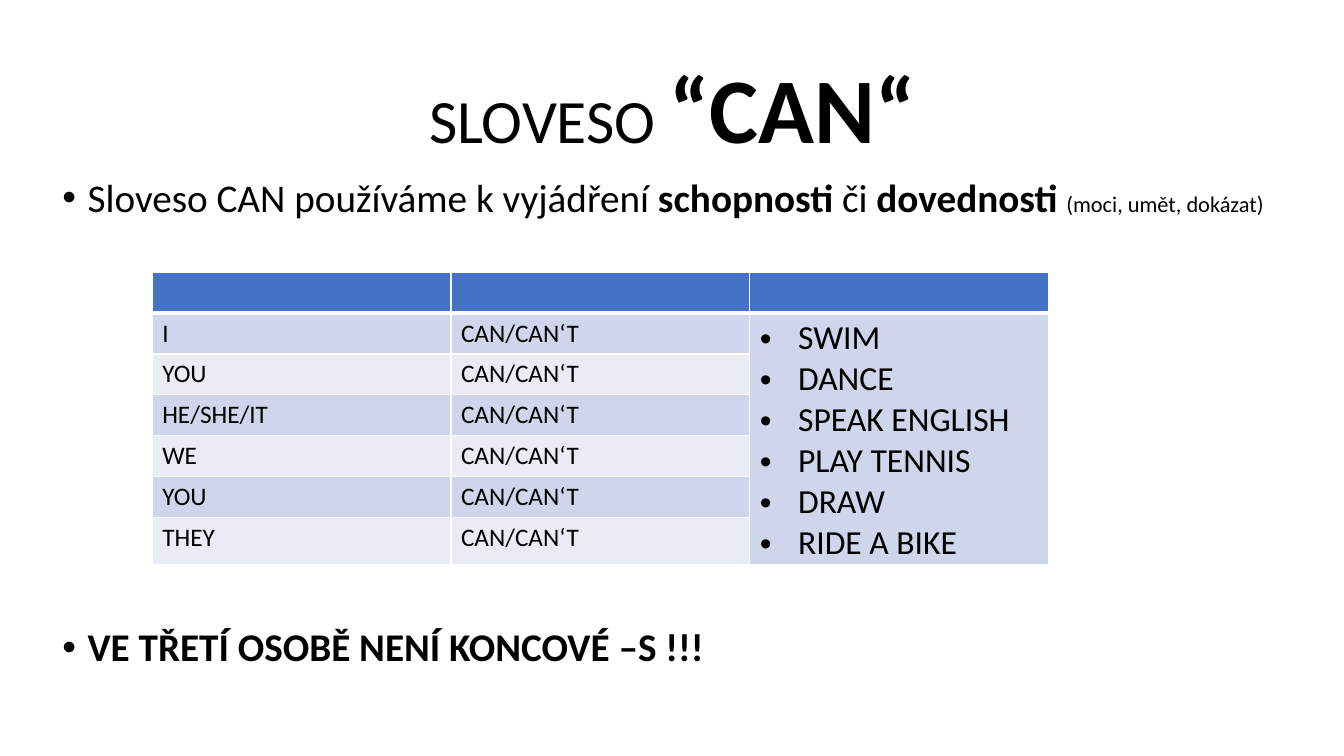
"""Build the lesson slide on the verb CAN."""
from dataclasses import dataclass
from lxml.etree import SubElement as Sub
from pptx import Presentation
from pptx.dml.color import RGBColor as Rgb
from pptx.enum.text import MSO_ANCHOR as Anchor, PP_ALIGN as Align
from pptx.oxml.ns import qn
from pptx.util import Inches, Pt


@dataclass(frozen=True)
class Theme:
    """Hold the colours and type sizes."""
    font: str = "Calibri"
    ink: str = "000000"
    line: str = "FFFFFF"
    head: str = "4472C4"
    bands: tuple[str, str] = ("CFD5EA", "E9EBF5")
    title: int = 44
    big: int = 66
    body: int = 28
    note: int = 16
    cell: int = 18
    verb: int = 24


@dataclass(frozen=True)
class Bit:
    """Describe one run of text."""
    text: str
    size: int
    bold: bool = False


@dataclass(frozen=True)
class Line:
    """Describe one paragraph of a text box."""
    bits: tuple[Bit, ...]
    gap: int = 0
    dot: bool = False
    align: Align = Align.LEFT


@dataclass(frozen=True)
class Box:
    """Describe one text box."""
    left: float
    top: float
    width: float
    height: float
    anchor: Anchor
    lines: tuple[Line, ...]


LOOK = Theme()
BOXES = (
    Box(0.92, 0.4, 11.5, 1.45, Anchor.MIDDLE, (
        Line((Bit("SLOVESO ", LOOK.title), Bit("“CAN“", LOOK.big, True)),
             align=Align.CENTER),
    )),
    Box(0.52, 1.72, 12.35, 5.38, Anchor.TOP, (
        Line((
            Bit("Sloveso CAN používáme k vyjádření ", LOOK.body),
            Bit("schopnosti", LOOK.body, True),
            Bit(" či ", LOOK.body),
            Bit("dovednosti ", LOOK.body, True),
            Bit("(moci, umět, dokázat)", LOOK.note),
        ), 10, True),
        Line((Bit("VE TŘETÍ OSOBĚ NENÍ KONCOVÉ –S !!!", LOOK.body, True),),
             291, True),
    )),
)
WHO = ("I", "YOU", "HE/SHE/IT", "WE", "YOU", "THEY")
VERBS = ("SWIM", "DANCE", "SPEAK ENGLISH", "PLAY TENNIS", "DRAW", "RIDE A BIKE")


def style(run, size: int, bold: bool = False) -> None:
    """Set the font of a run."""
    font = run.font
    font.name, font.size, font.bold = LOOK.font, Pt(size), bold
    font.color.rgb = Rgb.from_string(LOOK.ink)


def bullet(para, indent: float) -> None:
    """Give a paragraph a hanging bullet."""
    props = para._p.get_or_add_pPr()
    props.set("marL", str(Inches(indent)))
    props.set("indent", str(-Inches(indent)))
    Sub(props, qn("a:buFont"), typeface="Arial")
    Sub(props, qn("a:buChar"), char="•")


def add_box(slide, box: Box) -> None:
    """Draw a text box with its paragraphs."""
    spot = map(Inches, (box.left, box.top, box.width, box.height))
    frame = slide.shapes.add_textbox(*spot).text_frame
    frame.word_wrap = True
    frame.vertical_anchor = box.anchor
    frame.text = "\n".join("" for _ in box.lines)
    for para, line in zip(frame.paragraphs, box.lines):
        para.alignment = line.align
        para.line_spacing = 0.9
        para.space_before = Pt(line.gap)
        if line.dot:
            bullet(para, 0.25)
        for bit in line.bits:
            run = para.add_run()
            run.text = bit.text
            style(run, bit.size, bit.bold)


def paint(cell, row: int, fill: str) -> None:
    """Set the borders and fill of a cell."""
    props = cell._tc.get_or_add_tcPr()
    wide = {"T": row == 1, "B": row == 0}
    for side in "LRTB":
        width = Pt(3 if wide.get(side) else 1)
        edge = Sub(props, qn(f"a:ln{side}"), w=str(width))
        Sub(Sub(edge, qn("a:solidFill")), qn("a:srgbClr"), val=LOOK.line)
    cell.fill.solid()
    cell.fill.fore_color.rgb = Rgb.from_string(fill)


def write(cell, text: str, size: int) -> None:
    """Put text in a cell."""
    cell.text_frame.text = text
    for para in cell.text_frame.paragraphs:
        for run in para.runs:
            style(run, size)


def add_grid(slide) -> None:
    """Draw the table of persons and verbs."""
    rows = len(WHO) + 1
    spot = map(Inches, (1.51, 2.7, 8.89, 2.84))
    grid = slide.shapes.add_table(rows, 3, *spot).table
    grid.first_row = grid.horz_banding = False
    for row in range(rows):
        for col in range(3):
            band = 0 if col == 2 else (row - 1) % 2
            paint(grid.cell(row, col), row, LOOK.bands[band] if row else LOOK.head)
    for row, who in enumerate(WHO, 1):
        write(grid.cell(row, 0), who, LOOK.cell)
        write(grid.cell(row, 1), "CAN/CAN‘T", LOOK.cell)
    verbs = grid.cell(1, 2)
    verbs.merge(grid.cell(rows - 1, 2))
    write(verbs, "\n".join(VERBS), LOOK.verb)
    for para in verbs.text_frame.paragraphs:
        bullet(para, 0.38)


def main() -> None:
    """Build and save the slide."""
    deck = Presentation()
    deck.slide_width, deck.slide_height = Inches(13.33), Inches(7.5)
    slide = deck.slides.add_slide(deck.slide_layouts[6])
    for box in BOXES:
        add_box(slide, box)
    add_grid(slide)
    deck.save("out.pptx")


if __name__ == "__main__":
    main()
